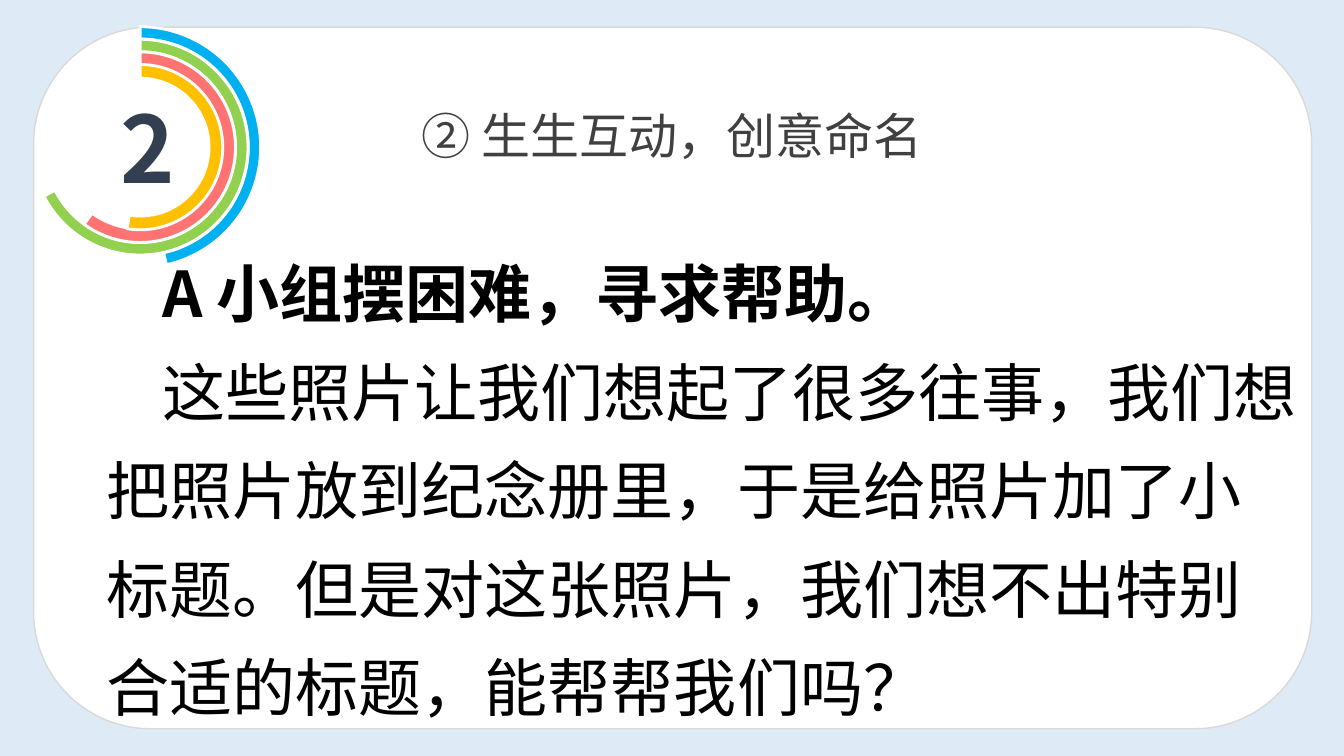
from dataclasses import dataclass

from lxml import etree
from pptx import Presentation
from pptx import util as u
from pptx.dml.color import RGBColor
from pptx.enum import shapes, text
from pptx.oxml.ns import qn

WIDTH, HEIGHT = u.Inches(13.33), u.Inches(7.5)


@dataclass(frozen=True)
class Theme:
    font: str = "Noto Sans CJK SC"
    background: str = "DEEBF7"
    panel: str = "FFFFFF"
    panel_line: str = "D9D9D9"
    number: str = "333F50"
    heading: str = "404040"
    body: str = "000000"
    number_size: float = 66
    heading_size: float = 35
    body_size: float = 45
    body_pitch: float = 70.4


THEME = Theme()

# Outermost first: colour, end angle in degrees, thickness as share of diameter
RINGS = [
    ("00B0F0", 77.4, 0.051),
    ("92D050", 153, 0.058),
    ("FF7473", 126, 0.071),
    ("FFC000", 99, 0.083),
]
RING_CENTER = (1.39, 1.46)
RING_DIAMETER, RING_STEP = 2.39, 0.25

BODY = [
    ("A 小组摆困难，寻求帮助。", True),
    ("这些照片让我们想起了很多往事，我们想把照片放到纪念册里，于是给照片加了小标题。"
     "但是对这张照片，我们想不出特别合适的标题，能帮帮我们吗？", False),
]


def share(x, y, w, h):
    """Turn shares of the slide's width and height into a box."""
    return [round(v) for v in (x * WIDTH, y * HEIGHT, w * WIDTH, h * HEIGHT)]


def place(sp, box):
    sp.left, sp.top, sp.width, sp.height = box


def style(sp, fill, line, width):
    sp.shadow.inherit = False
    sp.fill.solid()
    sp.fill.fore_color.rgb = RGBColor.from_string(fill)
    sp.line.color.rgb = RGBColor.from_string(line)
    sp.line.width = u.Pt(width)


def write(tf, content, *, size, color, bold=False, align=text.PP_ALIGN.LEFT,
          pitch=1.0, indent=0, new=False):
    """Write one paragraph; new adds it after those already in the frame."""
    p = tf.add_paragraph() if new else tf.paragraphs[0]
    p.alignment, p.line_spacing = align, pitch
    p.space_before = u.Pt(0)
    if indent:
        p._p.get_or_add_pPr().set("indent", str(u.Inches(indent)))
    r = p.add_run()
    r.text = content
    r.font.name, r.font.size, r.font.bold = THEME.font, u.Pt(size), bold
    r.font.color.rgb = RGBColor.from_string(color)
    etree.SubElement(r._r.rPr, qn("a:ea")).set("typeface", THEME.font)


def frame(sp, anchor, wrap=True):
    tf = sp.text_frame
    tf.word_wrap = wrap
    tf.auto_size = text.MSO_AUTO_SIZE.NONE
    tf.vertical_anchor = anchor
    return tf


def add_panel(s):
    sp = s.shapes.add_shape(shapes.MSO_SHAPE.ROUNDED_RECTANGLE,
                            *share(0.025, 0.036, 0.951, 0.928))
    style(sp, THEME.panel, THEME.panel_line, 1)
    s.shapes._spTree.insert(2, sp._element)  # behind the title


def add_badge(s, number):
    """Section number inside concentric arcs that start at twelve o'clock."""
    group = s.shapes.add_group_shape()
    sp = group.shapes.add_textbox(*share(0.0825, 0.113, 0.0435, 0.161))
    tf = frame(sp, text.MSO_ANCHOR.MIDDLE, wrap=False)
    write(tf, number, size=THEME.number_size, color=THEME.number, bold=True)
    for i, (color, end, thickness) in enumerate(RINGS):
        d = RING_DIAMETER - i * RING_STEP
        x, y = (c - d / 2 for c in RING_CENTER)
        arc = group.shapes.add_shape(shapes.MSO_SHAPE.BLOCK_ARC,
                                     *map(u.Inches, (x, y, d, d)))
        # Angles are stored in 60000ths of a degree, adjustments in 100000ths
        for k, value in enumerate((270 * 0.6, end * 0.6, thickness)):
            arc.adjustments[k] = value
        style(arc, color, THEME.panel, 2)


def add_heading(s, content):
    title = s.shapes.title
    place(title, share(0.219, 0.125, 0.562, 0.107))
    tf = frame(title, text.MSO_ANCHOR.MIDDLE)
    write(tf, content, size=THEME.heading_size, color=THEME.heading,
          align=text.PP_ALIGN.CENTER)


def add_body(s, paragraphs):
    sp = s.shapes.add_textbox(*share(0.072, 0.3, 0.903, 0.669))
    tf = frame(sp, text.MSO_ANCHOR.TOP)
    for i, (content, bold) in enumerate(paragraphs):
        write(tf, content, size=THEME.body_size, color=THEME.body, bold=bold,
              pitch=u.Pt(THEME.body_pitch), indent=0.55, new=i > 0)


def main():
    prs = Presentation()
    prs.slide_width, prs.slide_height = WIDTH, HEIGHT
    s = prs.slides.add_slide(prs.slide_layouts.get_by_name("Title Only"))
    s.background.fill.solid()
    s.background.fill.fore_color.rgb = RGBColor.from_string(THEME.background)
    add_panel(s)
    add_badge(s, "2")
    add_heading(s, "② 生生互动，创意命名")
    add_body(s, BODY)
    prs.save("out.pptx")


if __name__ == "__main__":
    main()
